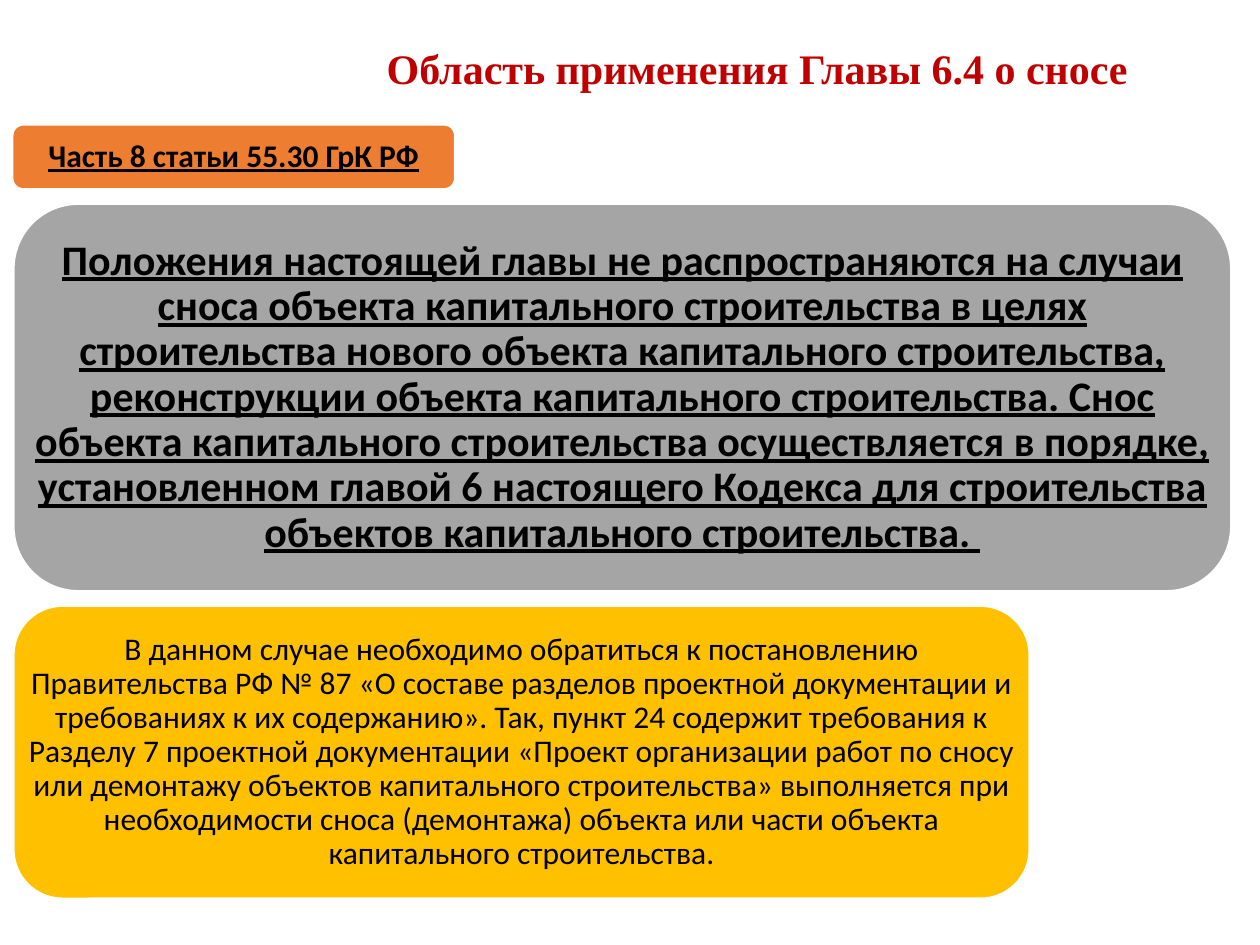
"""Build the slide on the scope of Chapter 6.4 about demolition."""
from pptx import Presentation
from pptx.dml.color import RGBColor
from pptx.enum.shapes import MSO_SHAPE
from pptx.enum.text import MSO_ANCHOR, PP_ALIGN
from pptx.util import Pt

THEME = {
    "title": RGBColor(0xC0, 0x00, 0x00),
    "text": RGBColor(0x00, 0x00, 0x00),
    "line": RGBColor(0xFF, 0xFF, 0xFF),
    "orange": RGBColor(0xED, 0x7D, 0x31),
    "grey": RGBColor(0xA5, 0xA5, 0xA5),
    "gold": RGBColor(0xFF, 0xC0, 0x00),
    "large": Pt(24),
    "small": Pt(18),
    "heading_font": "Times New Roman",
    "body_font": "Calibri",
}


def add_text(slide, box, text, align, insets, color, font):
    """Add a vertically centred text box with one formatted paragraph."""
    tf = slide.shapes.add_textbox(*box).text_frame
    side, edge = insets
    frame = {
        "word_wrap": True,
        "vertical_anchor": MSO_ANCHOR.MIDDLE,
        "margin_left": Pt(side),
        "margin_right": Pt(side),
        "margin_top": Pt(edge),
        "margin_bottom": Pt(edge),
    }
    for name, value in frame.items():
        setattr(tf, name, value)
    p = tf.paragraphs[0]
    p.alignment = align
    p.line_spacing = 0.9
    r = p.add_run()
    r.text = text
    r.font.color.rgb = color
    for name, value in font.items():
        setattr(r.font, name, value)


prs = Presentation()
prs.slide_width, prs.slide_height = Pt(720), Pt(540)
s = prs.slides.add_slide(prs.slide_layouts[6])

title_box = [Pt(v) for v in (213.84, 9.36, 469.44, 62.64)]
title_font = {"name": THEME["heading_font"], "size": THEME["large"], "bold": True}
add_text(s, title_box, "Область применения Главы 6.4 о сносе",
         PP_ALIGN.LEFT, (7.2, 3.6), THEME["title"], title_font)

panels = [
    ((7.2, 71.28, 252.72, 36.72), "orange", (5, 3),
     {"size": THEME["small"], "bold": True, "underline": True},
     "Часть 8 статьи 55.30 ГрК РФ"),
    ((7.92, 116.64, 695.52, 221.04), "grey", (7.2, 3.6),
     {"size": THEME["large"], "bold": True, "underline": True},
     "Положения настоящей главы не распространяются на случаи сноса объекта "
     "капитального строительства в целях строительства нового объекта "
     "капитального строительства, реконструкции объекта капитального "
     "строительства. Снос объекта капитального строительства осуществляется "
     "в порядке, установленном главой 6 настоящего Кодекса для строительства "
     "объектов капитального строительства. "),
    ((7.92, 346.32, 580.32, 167.04), "gold", (5, 3),
     {"size": THEME["small"]},
     "В данном случае необходимо обратиться к постановлению Правительства РФ "
     "№ 87 «О составе разделов проектной документации и требованиях к их "
     "содержанию». Так, пункт 24 содержит требования к Разделу 7 проектной "
     "документации «Проект организации работ по сносу или демонтажу объектов "
     "капитального строительства» выполняется при необходимости сноса "
     "(демонтажа) объекта или части объекта капитального строительства."),
]
for position, fill, insets, font, text in panels:
    box = [Pt(v) for v in position]
    sp = s.shapes.add_shape(MSO_SHAPE.ROUNDED_RECTANGLE, *box)
    sp.shadow.inherit = False
    sp.fill.solid()
    sp.fill.fore_color.rgb = THEME[fill]
    sp.line.color.rgb = THEME["line"]
    sp.line.width = Pt(1)
    add_text(s, box, text, PP_ALIGN.CENTER, insets, THEME["text"],
             {"name": THEME["body_font"], **font})

prs.save("out.pptx")
